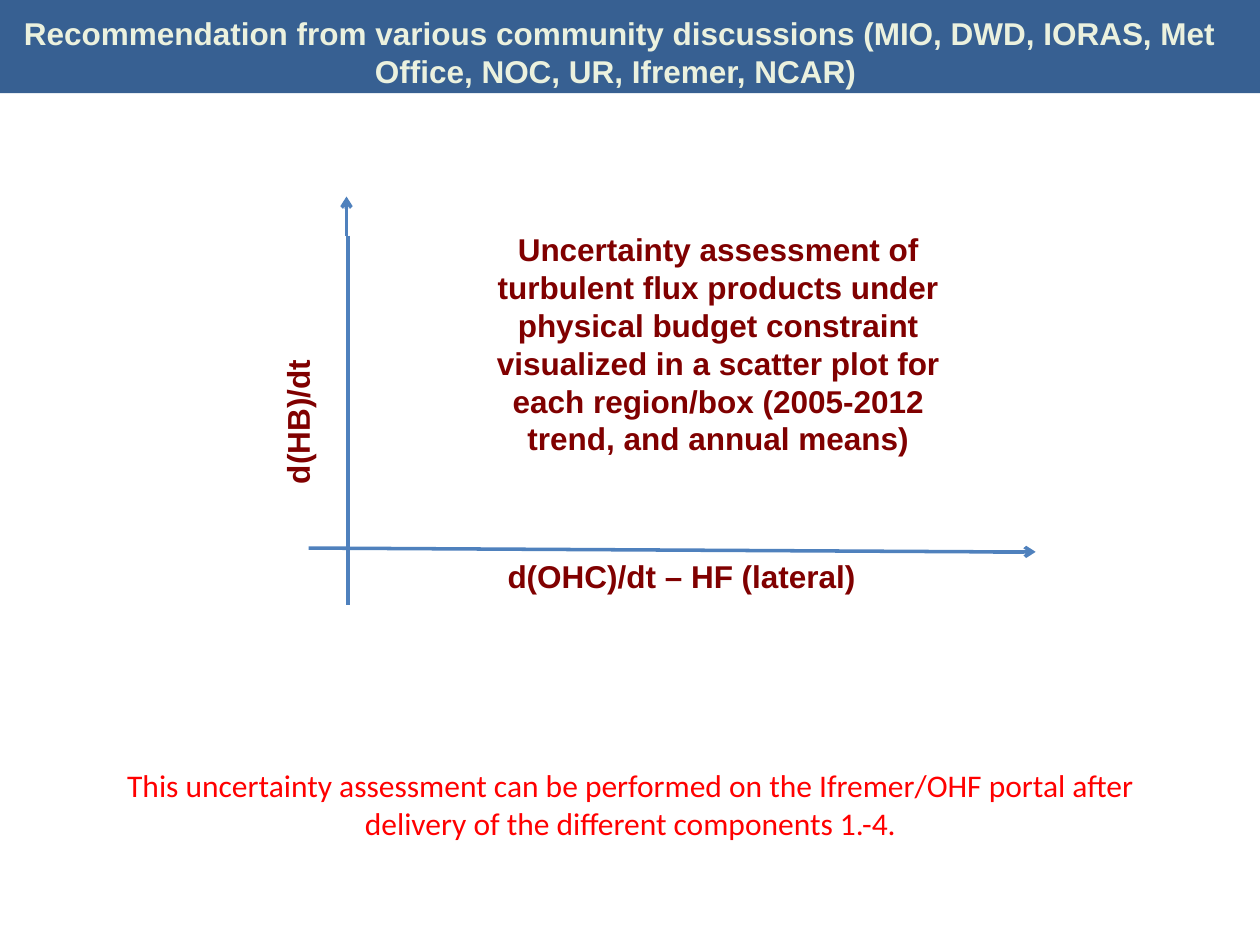
import dataclasses

import lxml.etree
import pptx
import pptx.dml.color
import pptx.enum.shapes
import pptx.enum.text
import pptx.oxml.ns
import pptx.util

Inches = pptx.util.Inches
Pt = pptx.util.Pt
ALIGN = pptx.enum.text.PP_ALIGN

COLORS = {
    "banner": "376092",
    "title": "EBF1DE",
    "axis": "4F81BD",
    "label": "800000",
    "note": "FF0000",
}


@dataclasses.dataclass
class Label:
    text: str
    box: tuple[float, float, float, float]
    color: str = "label"
    font: str = "Arial"
    bold: bool = True
    align: ALIGN = ALIGN.CENTER
    wrap: bool = True
    rotation: float = 0


@dataclasses.dataclass
class AxisSegment:
    start: tuple[float, float]
    end: tuple[float, float]
    arrow: bool = False


TITLE = Label(
    "Recommendation from various community discussions "
    "(MIO, DWD, IORAS, Met Office, NOC, UR, Ifremer, NCAR) ",
    (0.07, 0.06, 9.7, 0.7), color="title")

LABELS = [
    Label("d(OHC)/dt – HF (lateral)", (3.93, 4.37, 2.96, 0.4),
          align=ALIGN.LEFT, wrap=False),
    Label("d(HB)/dt", (1.77, 3.15, 1.18, 0.4),
          align=ALIGN.LEFT, wrap=False, rotation=270),
    Label("Uncertainty assessment of turbulent flux products under physical "
          "budget constraint visualized in a scatter plot for each region/box "
          "(2005-2012 trend, and annual means)", (3.84, 1.78, 3.72, 1.9)),
    Label("This uncertainty assessment can be performed on the Ifremer/OHF "
          "portal after delivery of the different components 1.-4.",
          (0.79, 6.03, 8.43, 0.7), color="note", font="Calibri", bold=False),
]

AXES = [
    AxisSegment((2.76, 1.87), (2.76, 4.8)),
    AxisSegment((2.45, 4.35), (7.88, 4.38)),
    AxisSegment((7.88, 4.38), (8.22, 4.38), arrow=True),
    AxisSegment((2.75, 1.87), (2.75, 1.56), arrow=True),
]


def rgb(name: str) -> pptx.dml.color.RGBColor:
    return pptx.dml.color.RGBColor.from_string(COLORS[name])


def write_label(shape, label: Label) -> None:
    """Place a text box or placeholder and fill it with the label's text."""
    shape.left, shape.top, shape.width, shape.height = map(Inches, label.box)
    shape.rotation = label.rotation
    frame = shape.text_frame
    frame.word_wrap = label.wrap
    frame.auto_size = pptx.enum.text.MSO_AUTO_SIZE.NONE
    frame.vertical_anchor = pptx.enum.text.MSO_ANCHOR.TOP
    paragraph = frame.paragraphs[0]
    paragraph.text = label.text
    paragraph.alignment = label.align
    paragraph.font.name = label.font
    paragraph.font.size = Pt(18)
    paragraph.font.bold = label.bold
    paragraph.font.color.rgb = rgb(label.color)


def draw_banner(slide) -> None:
    """Draw the title band behind everything else."""
    banner = slide.shapes.add_shape(
        pptx.enum.shapes.MSO_SHAPE.RECTANGLE, 0, 0, Inches(10), Inches(0.74))
    banner.shadow.inherit = False
    banner.fill.solid()
    banner.fill.fore_color.rgb = rgb("banner")
    banner.line.fill.background()
    slide.shapes.title._element.addprevious(banner._element)


def draw_axis(slide, segment: AxisSegment) -> None:
    axis = slide.shapes.add_connector(
        pptx.enum.shapes.MSO_CONNECTOR.STRAIGHT,
        *map(Inches, segment.start + segment.end))
    axis.line.color.rgb = rgb("axis")
    axis.line.width = Pt(2)
    qn = pptx.oxml.ns.qn
    if segment.arrow:
        lxml.etree.SubElement(
            axis.line._get_or_add_ln(), qn("a:tailEnd"), type="arrow")
    lxml.etree.SubElement(axis._element.spPr, qn("a:effectLst"))


def main() -> None:
    deck = pptx.Presentation()
    deck.slide_width, deck.slide_height = Inches(10), Inches(7.5)
    slide = deck.slides.add_slide(deck.slide_layouts.get_by_name("Title Only"))
    write_label(slide.shapes.title, TITLE)
    draw_banner(slide)
    for segment in AXES:
        draw_axis(slide, segment)
    for label in LABELS:
        write_label(slide.shapes.add_textbox(0, 0, 0, 0), label)
    deck.save("out.pptx")


if __name__ == "__main__":
    main()
